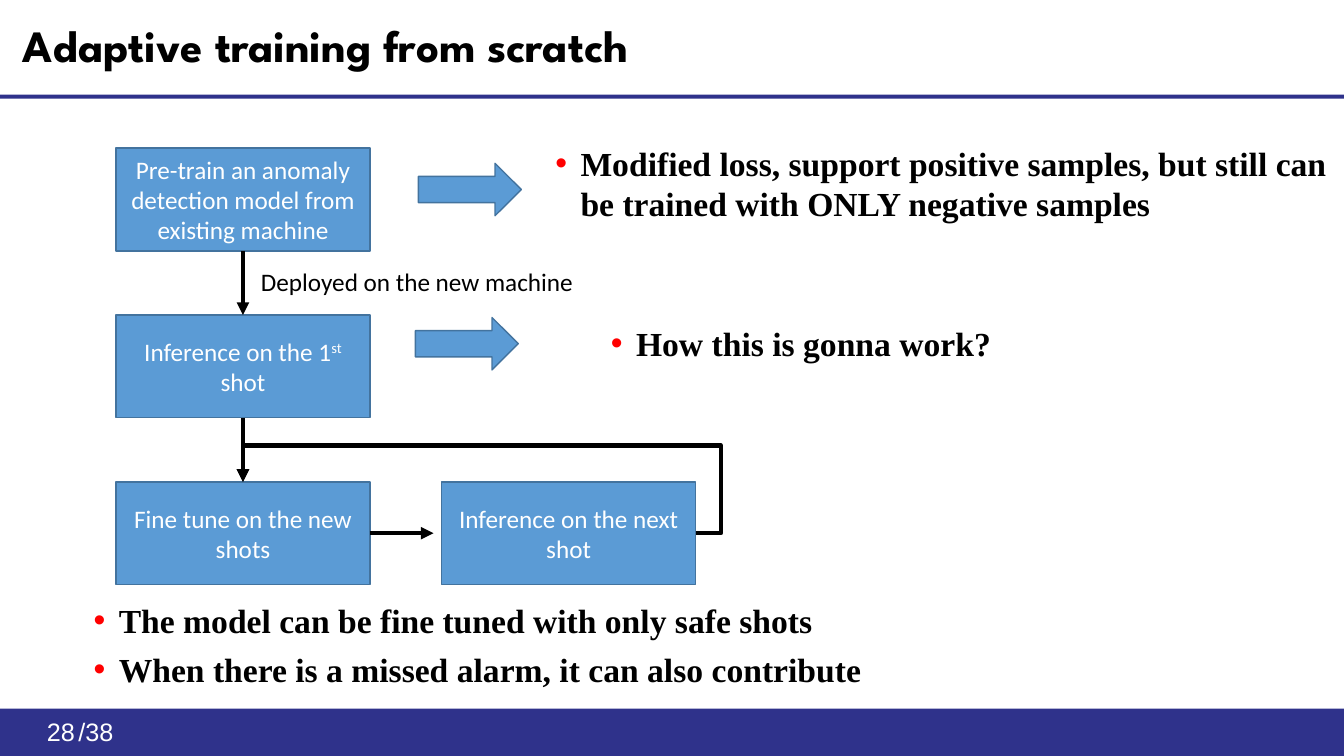
from dataclasses import dataclass

from lxml import etree
from pptx import Presentation, util as u
from pptx.dml.color import RGBColor
from pptx.enum import shapes, text
from pptx.oxml import ns

# Content
TITLE = "Adaptive training from scratch"
PAGE, PAGE_COUNT = "28", "/38"
EDGE_LABEL = "Deployed on the new machine"
STEPS = {  # name: (column, row, runs); a run is (words, superscript)
    "pretrain": (0, 0, [("Pre-train an anomaly detection model from existing machine", False)]),
    "first": (0, 1, [("Inference on the 1", False), ("st", True), (" shot", False)]),
    "tune": (0, 2, [("Fine tune on the new shots", False)]),
    "next": (1, 2, [("Inference on the next shot", False)]),
}
NOTES = [  # left, top, width, height, space after, wrap, lines
    (5.41, 1.37, 7.87, 1.02, 0, True,
     ["Modified loss, support positive samples, but still can be trained with ONLY negative samples"]),
    (5.96, 3.15, 4.09, 0.75, 6, True, ["How this is gonna work?"]),
    (0.83, 5.9, 7.89, 0.99, 6, False,
     ["The model can be fine tuned with only safe shots",
      "When there is a missed alarm, it can also contribute"]),
]
NOTE_ARROWS = [(4.15, 1.62), (4.12, 3.15)]


@dataclass(frozen=True)
class Theme:
    navy: str = "2F328B"
    blue: str = "5B9BD5"
    outline: str = "43739E"
    black: str = "000000"
    white: str = "FFFFFF"
    bullet: str = "FF0000"
    title: tuple = ("League Spartan", 32, True)
    note: tuple = ("Times New Roman", 24, True)
    label: tuple = ("Calibri", 18, False)
    footer: tuple = ("Arial", 18, False)


THEME = Theme()

# Grid of steps, in inches
WIDTH, HEIGHT = 13.33, 7.5
GRID_LEFT, GRID_TOP = 1.15, 1.47
PITCH_X, PITCH_Y = 3.23, 1.655
STEP_W, STEP_H = 2.52, 1.02
FOOTER_TOP = 7.03

presentation = Presentation()
presentation.slide_width = u.Inches(WIDTH)
presentation.slide_height = u.Inches(HEIGHT)
slide = presentation.slides.add_slide(presentation.slide_layouts[6])


def inches(*lengths):
    return [u.Inches(length) for length in lengths]


def add_run(paragraph, words, style, color, superscript=False):
    run = paragraph.add_run()
    run.text = words
    run.font.name, run.font.size, run.font.bold = style[0], u.Pt(style[1]), style[2]
    run.font.color.rgb = RGBColor.from_string(color)
    if superscript:
        run.font._element.set("baseline", "30000")


def add_block(kind, box, fill, line=None):
    shape = slide.shapes.add_shape(kind, *inches(*box))
    shape.shadow.inherit = False
    shape.fill.solid()
    shape.fill.fore_color.rgb = RGBColor.from_string(fill)
    if line:
        shape.line.color.rgb = RGBColor.from_string(line)
        shape.line.width = u.Pt(1)
    else:
        shape.line.fill.background()
    return shape


def add_text(box, words, style, color, align=text.PP_ALIGN.LEFT, wrap=True):
    frame = slide.shapes.add_textbox(*inches(*box)).text_frame
    frame.word_wrap = wrap
    paragraph = frame.paragraphs[0]
    paragraph.alignment = align
    if words:
        add_run(paragraph, words, style, color)
    return frame


def add_bullet(paragraph, words, space_after):
    properties = paragraph._p.get_or_add_pPr()
    properties.set("marL", str(u.Inches(0.25)))
    properties.set("indent", str(-u.Inches(0.25)))
    color = etree.SubElement(properties, ns.qn("a:buClr"))
    etree.SubElement(color, ns.qn("a:srgbClr"), val=THEME.bullet)
    etree.SubElement(properties, ns.qn("a:buFont"), typeface="Arial")
    etree.SubElement(properties, ns.qn("a:buChar"), char="•")
    paragraph.space_after = u.Pt(space_after)
    add_run(paragraph, words, THEME.note, THEME.black)


def add_arrow(start, end, bends=None):
    kind = shapes.MSO_CONNECTOR.ELBOW if bends else shapes.MSO_CONNECTOR.STRAIGHT
    connector = slide.shapes.add_connector(kind, *inches(*start, *end))
    connector.line.color.rgb = RGBColor.from_string(THEME.black)
    connector.line.width = u.Pt(3)
    etree.SubElement(connector.line._get_or_add_ln(), ns.qn("a:tailEnd"), type="triangle")
    properties = connector._element.spPr
    etree.SubElement(properties, ns.qn("a:effectLst"))
    if bends:
        geometry = properties.find(ns.qn("a:prstGeom"))
        geometry.set("prst", "bentConnector4")
        guides = geometry.find(ns.qn("a:avLst"))
        if guides is None:
            guides = etree.SubElement(geometry, ns.qn("a:avLst"))
        for number, share in enumerate(bends, 1):
            etree.SubElement(guides, ns.qn("a:gd"), name=f"adj{number}",
                             fmla=f"val {round(share * 100000)}")


def side(name, across, down):
    """Point on a step, as shares of its width and height."""
    column, row, _ = STEPS[name]
    return (GRID_LEFT + column * PITCH_X + across * STEP_W,
            GRID_TOP + row * PITCH_Y + down * STEP_H)


# Title and footer bands
RECTANGLE = shapes.MSO_SHAPE.RECTANGLE
add_block(RECTANGLE, (0, FOOTER_TOP, WIDTH, HEIGHT - FOOTER_TOP), THEME.navy)
add_block(RECTANGLE, (0, 0.94, WIDTH, 0.04), THEME.navy)
title = add_text((0.13, 0.04, 8.27, 0.87), TITLE, THEME.title, THEME.black)
title.vertical_anchor = text.MSO_ANCHOR.MIDDLE
title.paragraphs[0].line_spacing = 0.9
add_text((0.68, 7.06, 1.14, 0.4), PAGE_COUNT, THEME.footer, THEME.white)
add_text((0.05, 7.06, 0.79, 0.4), PAGE, THEME.footer, THEME.white, text.PP_ALIGN.RIGHT)

# Steps
for name, (_, _, runs) in STEPS.items():
    step = add_block(RECTANGLE, (*side(name, 0, 0), STEP_W, STEP_H), THEME.blue, THEME.outline)
    step.text_frame.word_wrap = True
    step.text_frame.vertical_anchor = text.MSO_ANCHOR.MIDDLE
    paragraph = step.text_frame.paragraphs[0]
    paragraph.alignment = text.PP_ALIGN.CENTER
    for words, superscript in runs:
        add_run(paragraph, words, THEME.label, THEME.white, superscript)

# Flow between steps, with the loop back to tuning
for upper, lower in [("pretrain", "first"), ("first", "tune")]:
    add_arrow(side(upper, 0.5, 1), side(lower, 0.5, 0))
add_arrow(side("tune", 1, 0.5), side("tune", 1.25, 0.5))
add_arrow(side("next", 1, 0.5), side("tune", 0.5, 0), bends=(-0.056, 1.707))
add_text((2.49, 2.59, 4.17, 0.4), EDGE_LABEL, THEME.label, THEME.black)

# Notes and the arrows that lead to them
for left, top in NOTE_ARROWS:
    add_block(shapes.MSO_SHAPE.RIGHT_ARROW, (left, top, 1.02, 0.52), THEME.blue, THEME.outline)
for *box, space_after, wrap, lines in NOTES:
    frame = add_text(box, "", THEME.note, THEME.black, wrap=wrap)
    for index, words in enumerate(lines):
        paragraph = frame.add_paragraph() if index else frame.paragraphs[0]
        add_bullet(paragraph, words, space_after)

presentation.save("out.pptx")
